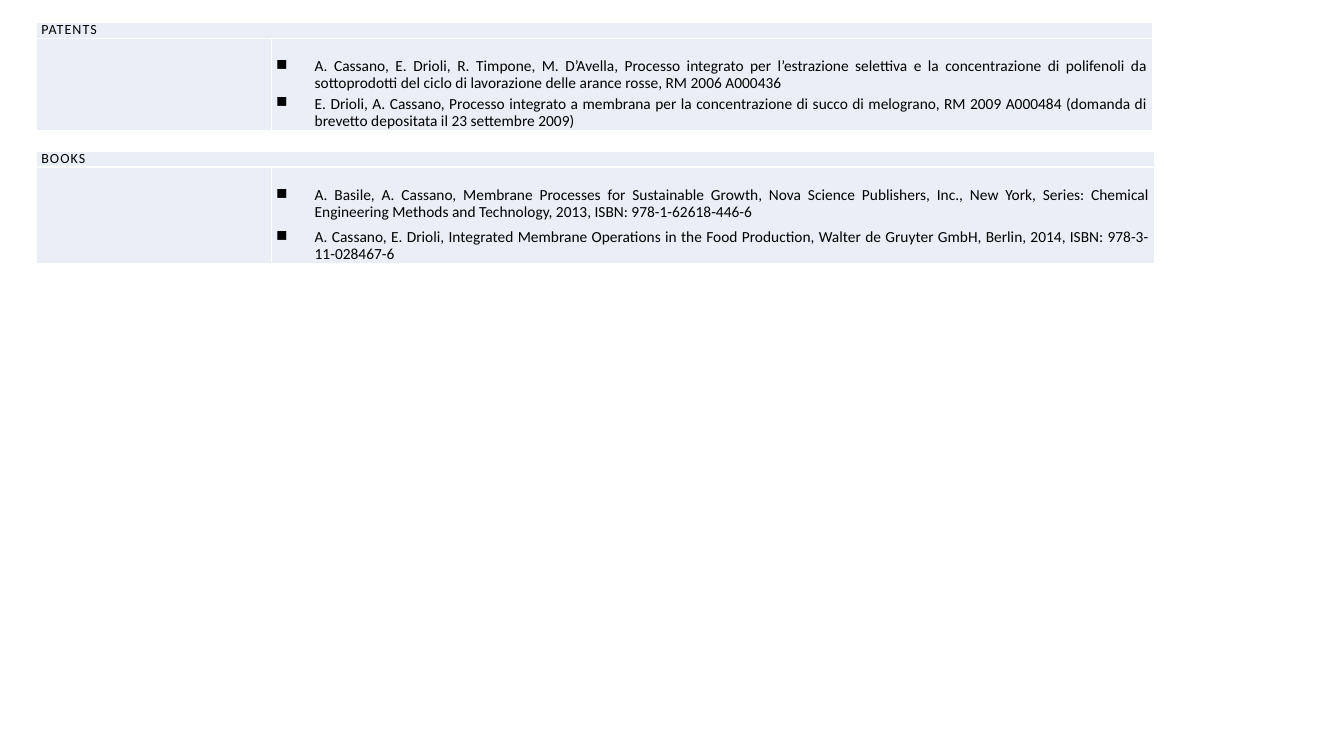
from pptx import Presentation
from pptx import util as u
from pptx.dml.color import RGBColor
from pptx.enum import text
from pptx.oxml import parse_xml
from pptx.oxml.ns import nsdecls

PALE_BLUE, BLACK, WHITE = "EAEFF7", "000000", "FFFFFF"
LABEL_WIDTH = u.Cm(5.92)
HEADING_HEIGHT = u.Cm(0.39)

PATENTS = [
    "A. Cassano, E. Drioli, R. Timpone, M. D’Avella, Processo integrato per l’estrazione selettiva "
    "e la concentrazione di polifenoli da sottoprodotti del ciclo di lavorazione delle arance rosse, "
    "RM 2006 A000436",
    "E. Drioli, A. Cassano, Processo integrato a membrana per la concentrazione di succo di melograno, "
    "RM 2009 A000484 (domanda di brevetto depositata il 23 settembre 2009)",
]
BOOKS = [
    "A. Basile, A. Cassano, Membrane Processes for Sustainable Growth, Nova Science Publishers, Inc., "
    "New York, Series: Chemical Engineering Methods and Technology, 2013, ISBN: 978-1-62618-446-6",
    "A. Cassano, E. Drioli, Integrated Membrane Operations in the Food Production, "
    "Walter de Gruyter GmbH, Berlin, 2014, ISBN: 978-3-11-028467-6",
]


def rgb(color):
    return RGBColor.from_string(color)


def write(paragraph, words, size, line, after=0, align=text.PP_ALIGN.LEFT, bullet=None, spacing=0):
    """Fill one paragraph; spacing is in hundredths of a point."""
    if bullet:
        properties = paragraph._p.get_or_add_pPr()
        indent = u.Cm(0.97)
        properties.set("marL", str(indent))
        properties.set("indent", str(-indent))
        properties.append(parse_xml(f'<a:buChar {nsdecls("a")} char="{bullet}"/>'))
    paragraph.alignment = align
    paragraph.line_spacing = u.Pt(line)
    paragraph.space_after = u.Pt(after)
    run = paragraph.add_run()
    run.text = words
    run.font.name = "Calibri"
    run.font.size = u.Pt(size)
    run.font.color.rgb = rgb(BLACK)
    if spacing:
        run.font._element.set("spc", str(spacing))


def style_cell(cell):
    """White borders, pale fill and tight margins."""
    properties = cell._tc.get_or_add_tcPr()
    for side in ("lnL", "lnR", "lnT", "lnB"):
        properties.append(parse_xml(
            f'<a:{side} {nsdecls("a")} w="{u.Pt(1)}"><a:solidFill>'
            f'<a:srgbClr val="{WHITE}"/></a:solidFill></a:{side}>'))
    cell.fill.solid()
    cell.fill.fore_color.rgb = rgb(PALE_BLUE)
    cell.margin_left = cell.margin_right = u.Cm(0.12)
    cell.margin_top = cell.margin_bottom = 0


def add_section(slide, heading, entries, top, entries_width, entries_height, gap):
    """A heading row across both columns, with the entries below on the right."""
    section = slide.shapes.add_table(
        2, 2, u.Cm(0.92), top, LABEL_WIDTH + entries_width, HEADING_HEIGHT + entries_height).table
    section.first_row = section.horz_banding = False
    for column, width in zip(section.columns, (LABEL_WIDTH, entries_width)):
        column.width = width
    for row, height in zip(section.rows, (HEADING_HEIGHT, entries_height)):
        row.height = height
    for cell in section.iter_cells():
        style_cell(cell)

    # Heading
    heading_cell = section.cell(0, 0)
    heading_cell.merge(section.cell(0, 1))
    write(heading_cell.text_frame.paragraphs[0], heading, size=10, line=11, spacing=80)

    # Entries
    entries_cell = section.cell(1, 1)
    entries_cell.margin_top = u.Cm(0.53)
    frame = entries_cell.text_frame
    for number, entry in enumerate(entries):
        paragraph = frame.add_paragraph() if number else frame.paragraphs[0]
        write(paragraph, entry, size=11, line=12, after=gap,
              align=text.PP_ALIGN.JUSTIFY, bullet="■")


def main():
    deck = Presentation()
    deck.slide_width, deck.slide_height = u.Cm(33.87), u.Cm(19.05)
    slide = deck.slides.add_slide(deck.slide_layouts[6])
    add_section(slide, "PATENTS", PATENTS, u.Cm(0.57), u.Cm(22.21), u.Cm(2.33), gap=3)
    add_section(slide, "BOOKS", BOOKS, u.Cm(3.82), u.Cm(22.26), u.Cm(2.43), gap=6)
    deck.save("out.pptx")


if __name__ == "__main__":
    main()
